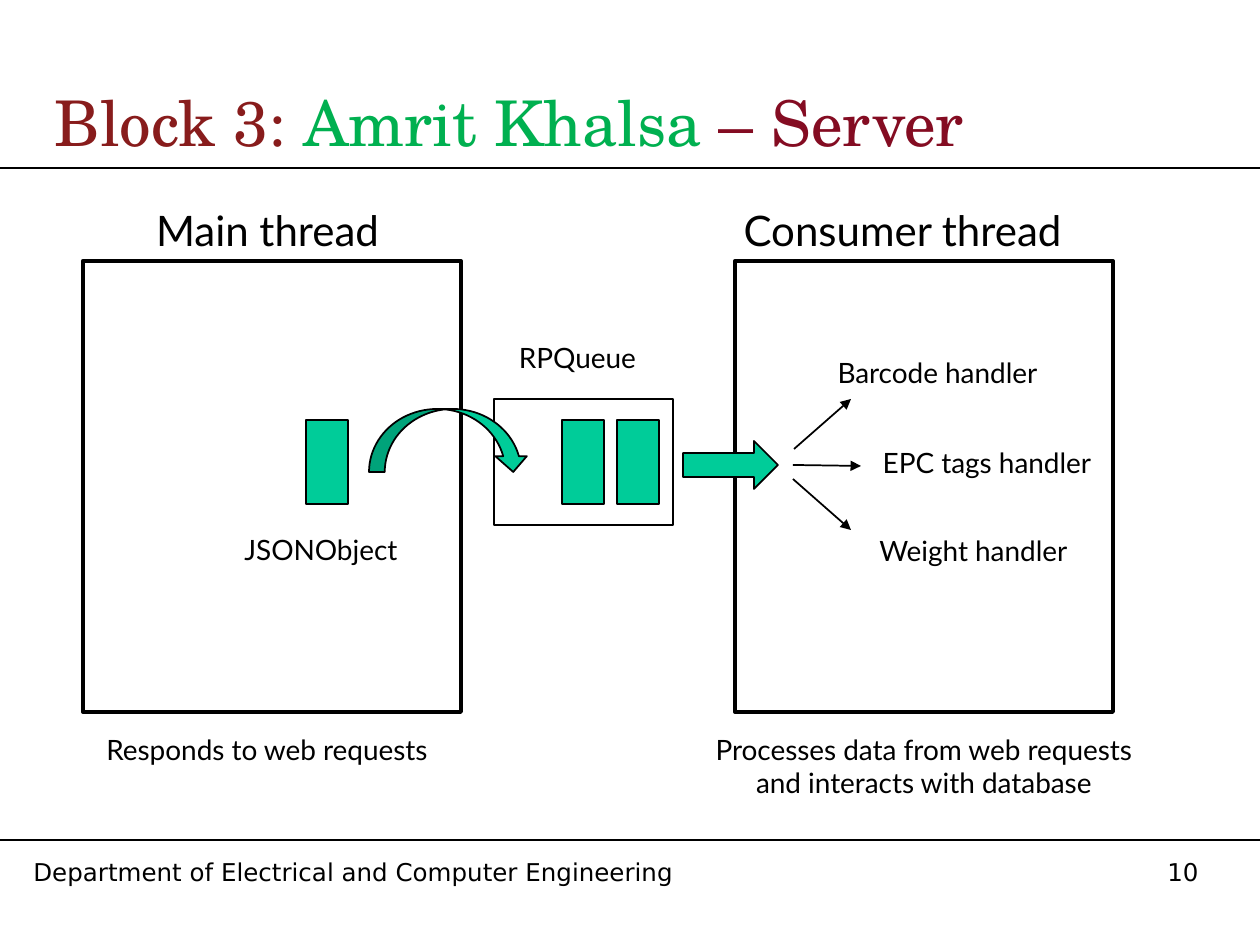
"""Build the slide on the server's main and consumer threads."""
from lxml import etree
from pptx import Presentation
from pptx.dml.color import RGBColor
from pptx.enum.shapes import MSO_CONNECTOR, MSO_SHAPE
from pptx.enum.text import MSO_ANCHOR, MSO_AUTO_SIZE, PP_ALIGN
from pptx.oxml.ns import qn
from pptx.util import Emu, Pt

RECT, RIGHT, CURVE = MSO_SHAPE.RECTANGLE, MSO_SHAPE.RIGHT_ARROW, MSO_SHAPE.CURVED_DOWN_ARROW
LINE = MSO_CONNECTOR.STRAIGHT
LEFT, MID = PP_ALIGN.LEFT, PP_ALIGN.CENTER
SCALE = 914400 / 126
HUES = {"ink": "000000", "paper": "FFFFFF", "mint": "00CC99",
        "brick": "881C1C", "green": "00B050", "wine": "840C22"}


def place(*nums):
    return [Emu(round(num * SCALE)) for num in nums]


def style(font, face, size, hue):
    for key, val in {"name": face, "size": Pt(size)}.items():
        setattr(font, key, val)
    font.color.rgb = RGBColor.from_string(HUES[hue])


deck = Presentation()
deck.slide_width, deck.slide_height = place(1260, 945)
slide = deck.slides.add_slide(deck.slide_layouts[5])
shapes = slide.shapes

title = shapes.title
for key, val in zip(("left", "top", "width", "height"), place(42, 84, 1218, 74)):
    setattr(title, key, val)
frame = title.text_frame
for key, val in {"vertical_anchor": MSO_ANCHOR.MIDDLE, "word_wrap": True,
                 "auto_size": MSO_AUTO_SIZE.NONE}.items():
    setattr(frame, key, val)
para = frame.paragraphs[0]
para.alignment = LEFT
for text, hue in (("Block 3: ", "brick"), ("Amrit Khalsa", "green"), (" – Server", "wine")):
    run = para.add_run()
    run.text = text
    style(run.font, "TeX Gyre Schola", 36, hue)

blocks = [
    (RECT, 83, 261, 378, 451, "paper", 2.25),
    (RECT, 494, 399, 179, 126, "paper", 1),
    (RECT, 735, 261, 378, 451, "paper", 2.25),
    (RECT, 617, 420, 42, 84, "mint", 1),
    (RECT, 562, 420, 42, 84, "mint", 1),
    (RECT, 306, 420, 42, 84, "mint", 1),
    (RIGHT, 683, 441, 95, 48, "mint", 1),
    (CURVE, 369, 409, 160, 63, "mint", 1),
]
for kind, x, y, w, h, hue, thick in blocks:
    block = shapes.add_shape(kind, *place(x, y, w, h))
    block.shadow.inherit = False
    block.fill.solid()
    block.fill.fore_color.rgb = RGBColor.from_string(HUES[hue])
    block.line.color.rgb = RGBColor.from_string(HUES["ink"])
    block.line.width = Pt(thick)

lines = [
    (0, 168, 1260, 168, False),
    (0, 840, 1260, 840, False),
    (794, 449, 851, 399, True),
    (793, 479, 851, 530, True),
    (793, 465, 861, 466, True),
]
for *ends, head in lines:
    line = shapes.add_connector(LINE, *place(*ends))
    line.line.color.rgb = RGBColor.from_string(HUES["ink"])
    line.line.width = Pt(1)
    if head:
        etree.SubElement(line.line._get_or_add_ln(), qn("a:tailEnd"), type="triangle")
    etree.SubElement(line._element.spPr, qn("a:effectLst"))

labels = [
    ("Main thread", 89, 198, 357, 63, "Lato", 24, MID, True),
    ("Consumer thread", 724, 198, 357, 63, "Lato", 24, MID, True),
    ("JSONObject", 232, 526, 189, 47, "Lato", 16, LEFT, True),
    ("RPQueue", 483, 334, 189, 47, "Lato", 16, MID, True),
    ("Responds to web requests", 94, 726, 368, 47, "Lato", 16, LEFT, True),
    ("Processes data from web requests and interacts with database",
     693, 726, 462, 81, "Lato", 16, MID, True),
    ("Barcode handler", 822, 349, 231, 47, "Lato", 16, MID, True),
    ("EPC tags handler", 861, 439, 252, 47, "Lato", 16, MID, True),
    ("Weight handler", 834, 527, 279, 47, "Lato", 16, MID, True),
    ("Department of Electrical and Computer Engineering",
     21, 851, 668, 42, "DejaVu Sans", 14, LEFT, False),
    ("10", 1155, 851, 84, 42, "DejaVu Sans", 14, LEFT, True),
]
for text, x, y, w, h, face, size, align, wrap in labels:
    frame = shapes.add_textbox(*place(x, y, w, h)).text_frame
    frame.word_wrap = wrap
    para = frame.paragraphs[0]
    para.text = text
    para.alignment = align
    style(para.runs[0].font, face, size, "ink")

deck.save("out.pptx")
